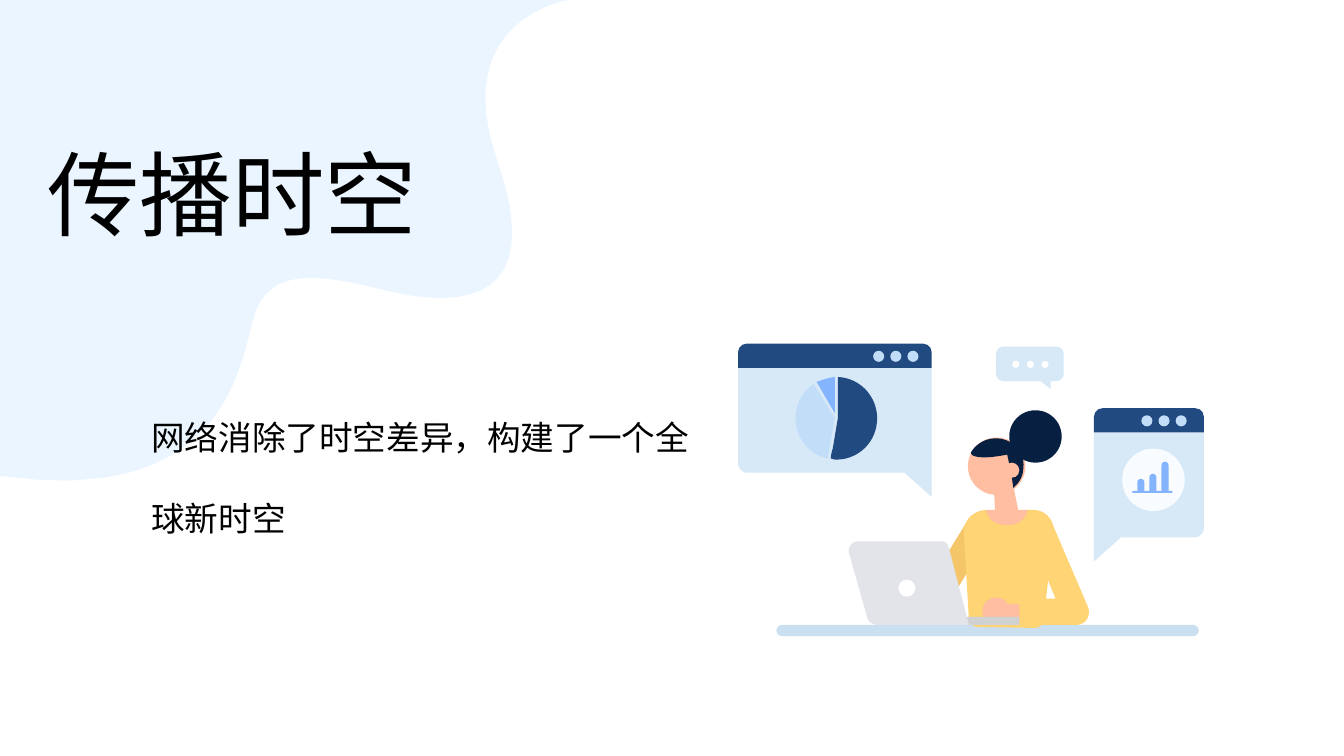
from pptx import Presentation
from pptx.dml.color import RGBColor
from pptx.enum.shapes import MSO_SHAPE as Shape
from pptx.enum.text import PP_ALIGN as Align
from pptx.oxml.ns import qn
from pptx.util import Inches, Pt
from lxml import etree

FONT = "Noto Sans CJK SC"
CURVE_STEPS = 16
COLORS = {
    "backdrop": "EBF5FF", "desk": "CADFEF", "panel": "D7E8F7", "navy": "214A81",
    "pale": "C1DDF7", "badge": "F8FCFF", "blue": "84B4FE", "white": "FFFFFF",
    "sleeve": "F4C669", "sweater": "FFD474", "skin": "FFBDA1", "hair": "072042",
    "keyboard": "CFD1D3", "laptop": "E2E4E9", "text": "000000",
}

TEXTS = [
    {"text": "传播时空", "box": (0.37, 1.24, 4.92, 1.21), "size": 66, "line": 84,
     "align": Align.JUSTIFY, "insets": (0.1, 0.05, 0.1, 0.05)},
    {"text": "网络消除了时空差异，构建了一个全球新时空", "box": (1.39, 3.74, 5.59, 2.07), "size": 24,
     "line": 57.6, "align": Align.LEFT, "insets": (0.11, 0, 0.09, 0)},
]

# name: left, top, width, tail x, far x, first dot x
WINDOWS = {
    "statistics": {"top": 4.05, "tail": 10.85, "far": 11.94, "dot": 11.32},
    "shares": {"top": 3.41, "tail": 9.24, "far": 7.32, "dot": 8.66},
}
BAR_TOPS = [4.75, 4.70, 4.58]
BAR_BASE = 4.87

BACKDROP = [(5.64, 0), (5.64, 0, 4.44, 0.18, 4.93, 1.59), (5.43, 3, 4.58, 3.06, 3.86, 2.89),
            (3.15, 2.71, 2.65, 2.64, 2.51, 3.17), (2.37, 3.7, 2.18, 5.04, -0.01, 4.72), (-0.01, 0)]

PIE_SLICES = [
    ("navy", [(8.31, 4.15), (8.31, 3.74), (8.53, 3.75, 8.7, 3.93, 8.7, 4.15),
              (8.7, 4.38, 8.52, 4.56, 8.29, 4.56), (8.27, 4.56, 8.26, 4.55, 8.24, 4.55),
              (8.24, 4.52, 8.25, 4.48, 8.26, 4.45)]),
    ("blue", [(8.28, 4.1), (8.1, 3.79), (8.15, 3.77, 8.21, 3.75, 8.28, 3.74)]),
    ("pale", [(8.07, 3.81), (8.28, 4.15), (8.26, 4.25, 8.23, 4.42, 8.21, 4.55),
              (8.03, 4.51, 7.9, 4.35, 7.89, 4.17), (7.89, 4.14), (7.89, 4, 7.97, 3.88, 8.07, 3.81)]),
]

BUBBLE_TAIL = [(10.42, 3.74), (10.42, 3.86), (10.27, 3.74)]

BACK_ARM = [(9.32, 6.01), (9.29, 6.01, 9.27, 6, 9.24, 5.99), (9.18, 5.95, 9.16, 5.87, 9.2, 5.81),
            (9.6, 5.16), (9.64, 5.09, 9.72, 5.08, 9.78, 5.11), (9.85, 5.15, 9.86, 5.23, 9.83, 5.29),
            (9.43, 5.95), (9.4, 5.99, 9.36, 6.01, 9.32, 6.01)]
NECK = [(9.86, 4.89), (9.88, 5.24), (10.13, 5.21), (10.03, 4.72)]
TORSO = [(9.79, 5.06), (10.25, 5.06), (10.39, 5.06, 10.46, 5.19, 10.45, 5.28), (10.35, 6.16),
         (10.34, 6.2, 10.31, 6.23, 10.26, 6.23), (9.7, 6.22), (9.65, 6.22, 9.62, 6.19, 9.61, 6.15),
         (9.56, 5.3), (9.55, 5.17, 9.65, 5.06, 9.79, 5.06)]
COLLAR = [(10.19, 5.06), (9.78, 5.06), (9.78, 5.06, 9.8, 5.21, 9.99, 5.21),
          (10.17, 5.21, 10.19, 5.06, 10.19, 5.06)]
HAND = [(9.76, 6), (9.79, 5.94, 9.87, 5.91, 9.94, 5.94), (9.96, 5.95, 9.98, 5.97, 9.99, 5.99),
        (10.19, 6), (10.26, 6.13), (9.98, 6.15), (9.94, 6.19, 9.87, 6.21, 9.82, 6.18),
        (9.75, 6.15, 9.72, 6.07, 9.76, 6)]
LAPTOP_LID = [(9.61, 6.2), (8.71, 6.2), (8.66, 6.2, 8.61, 6.17, 8.6, 6.12), (8.42, 5.48),
              (8.41, 5.43, 8.45, 5.37, 8.51, 5.37), (9.34, 5.37), (9.37, 5.37, 9.4, 5.39, 9.41, 5.43)]
FRONT_ARM = [(10.11, 6.2), (10.67, 6.2), (10.7, 6.2, 10.73, 6.19, 10.76, 6.17),
             (10.8, 6.13, 10.81, 6.07, 10.79, 6.02), (10.43, 5.18),
             (10.4, 5.11, 10.33, 5.09, 10.27, 5.11), (10.2, 5.14, 10.17, 5.21, 10.2, 5.28),
             (10.47, 5.94), (10.11, 5.94)]
FRINGE = [(9.9, 4.35), (9.79, 4.34, 9.68, 4.4, 9.63, 4.49), (9.63, 4.5), (9.65, 4.52),
          (9.7, 4.54, 9.79, 4.55, 9.99, 4.51), (10.03, 4.69), (10.03, 4.69, 10.04, 4.77, 10.05, 4.83),
          (10.05, 4.84), (10.06, 4.83), (10.11, 4.79, 10.15, 4.72, 10.15, 4.64),
          (10.17, 4.49, 10.05, 4.36, 9.9, 4.35)]


def paint(shape, color):
    shape.shadow.inherit = False
    shape.fill.solid()
    shape.fill.fore_color.rgb = RGBColor.from_string(COLORS[color])
    shape.line.fill.background()


def add_preset(slide, kind, color, box, rounding=None):
    shape = slide.shapes.add_shape(kind, *map(Inches, box))
    if rounding is not None:
        shape.adjustments[0] = rounding
    paint(shape, color)


def add_circle(slide, color, left, top, size):
    add_preset(slide, Shape.OVAL, color, (left, top, size, size))


def flatten(outline):
    points = [outline[0]]
    for segment in outline[1:]:
        if len(segment) == 2:
            points.append(segment)
            continue
        corners = [points[-1], segment[:2], segment[2:4], segment[4:]]
        for step in range(1, CURVE_STEPS + 1):
            t = step / CURVE_STEPS
            weights = ((1 - t) ** 3, 3 * t * (1 - t) ** 2, 3 * t * t * (1 - t), t ** 3)
            points.append(tuple(sum(w * c[axis] for w, c in zip(weights, corners)) for axis in (0, 1)))
    return [(Inches(x), Inches(y)) for x, y in points]


def add_outline(slide, color, outline):
    points = flatten(outline)
    builder = slide.shapes.build_freeform(*points[0])
    builder.add_line_segments(points[1:], close=True)
    paint(builder.convert_to_shape(), color)


def add_window(slide, top, tail, far, dot):
    side = 1 if far > tail else -1
    left, width = min(tail, far), abs(far - tail)
    head, bottom, radius = top + 0.24, top + 1.28, 0.09
    add_outline(slide, "panel", [
        (tail, head), (far, head), (far, bottom - radius),
        (far, bottom - radius / 2, far - side * radius / 2, bottom, far - side * radius, bottom),
        (tail + side * 0.27, bottom), (tail, top + 1.52)])
    add_preset(slide, Shape.ROUND_2_SAME_RECTANGLE, "navy", (left, top, width, 0.24), 0.35)
    for index in range(3):
        add_circle(slide, "pale", dot + index * 0.17, top + 0.07, 0.11)


def add_text(slide, text, box, size, line, align, insets):
    frame = slide.shapes.add_textbox(*map(Inches, box)).text_frame
    frame.word_wrap = True
    frame.margin_left, frame.margin_top, frame.margin_right, frame.margin_bottom = map(Inches, insets)
    paragraph = frame.paragraphs[0]
    paragraph.text = text
    paragraph.alignment = align
    paragraph.line_spacing = Pt(line)
    paragraph.font.size = Pt(size)
    paragraph.font.name = FONT
    paragraph.font.color.rgb = RGBColor.from_string(COLORS["text"])
    run_properties = paragraph.runs[0].font
    run_properties.name = FONT
    latin = paragraph.runs[0]._r.rPr.find(qn("a:latin"))
    east_asian = etree.Element(qn("a:ea"), typeface=FONT)
    latin.addnext(east_asian)


def draw_charts(slide):
    for window in WINDOWS.values():
        add_window(slide, **window)
    add_circle(slide, "badge", 11.13, 4.45, 0.62)
    for index, top in enumerate(BAR_TOPS):
        box = (11.28 + index * 0.12, top, 0.07, BAR_BASE - top)
        add_preset(slide, Shape.ROUND_2_SAME_RECTANGLE, "blue", box, 0.5)
    add_preset(slide, Shape.ROUNDED_RECTANGLE, "blue", (11.23, BAR_BASE, 0.4, 0.02), 0.5)
    for color, outline in PIE_SLICES:
        add_outline(slide, color, outline)
    add_preset(slide, Shape.ROUNDED_RECTANGLE, "panel", (9.88, 3.44, 0.67, 0.34), 0.2)
    add_outline(slide, "panel", BUBBLE_TAIL)
    for index in range(3):
        add_circle(slide, "white", 10.04 + index * 0.145, 3.58, 0.07)


def draw_woman(slide):
    add_outline(slide, "sleeve", BACK_ARM)
    add_outline(slide, "skin", NECK)
    add_circle(slide, "skin", 9.6, 4.34, 0.57)
    add_outline(slide, "sweater", TORSO)
    add_outline(slide, "skin", COLLAR)
    add_circle(slide, "hair", 10.01, 4.07, 0.52)
    add_outline(slide, "skin", HAND)
    add_preset(slide, Shape.RECTANGLE, "keyboard", (9.52, 6.12, 0.6, 0.08))
    add_outline(slide, "laptop", LAPTOP_LID)
    add_circle(slide, "white", 8.91, 5.75, 0.17)
    add_outline(slide, "sweater", FRONT_ARM)
    add_outline(slide, "hair", FRINGE)
    add_circle(slide, "skin", 9.96, 4.59, 0.15)


def main():
    presentation = Presentation()
    presentation.slide_width, presentation.slide_height = Inches(13.33), Inches(7.5)
    slide = presentation.slides.add_slide(presentation.slide_layouts[6])
    add_outline(slide, "backdrop", BACKDROP)
    add_preset(slide, Shape.ROUNDED_RECTANGLE, "desk", (7.7, 6.2, 4.19, 0.11), 0.5)
    draw_charts(slide)
    draw_woman(slide)
    for text in TEXTS:
        add_text(slide, **text)
    presentation.save("out.pptx")


if __name__ == "__main__":
    main()
